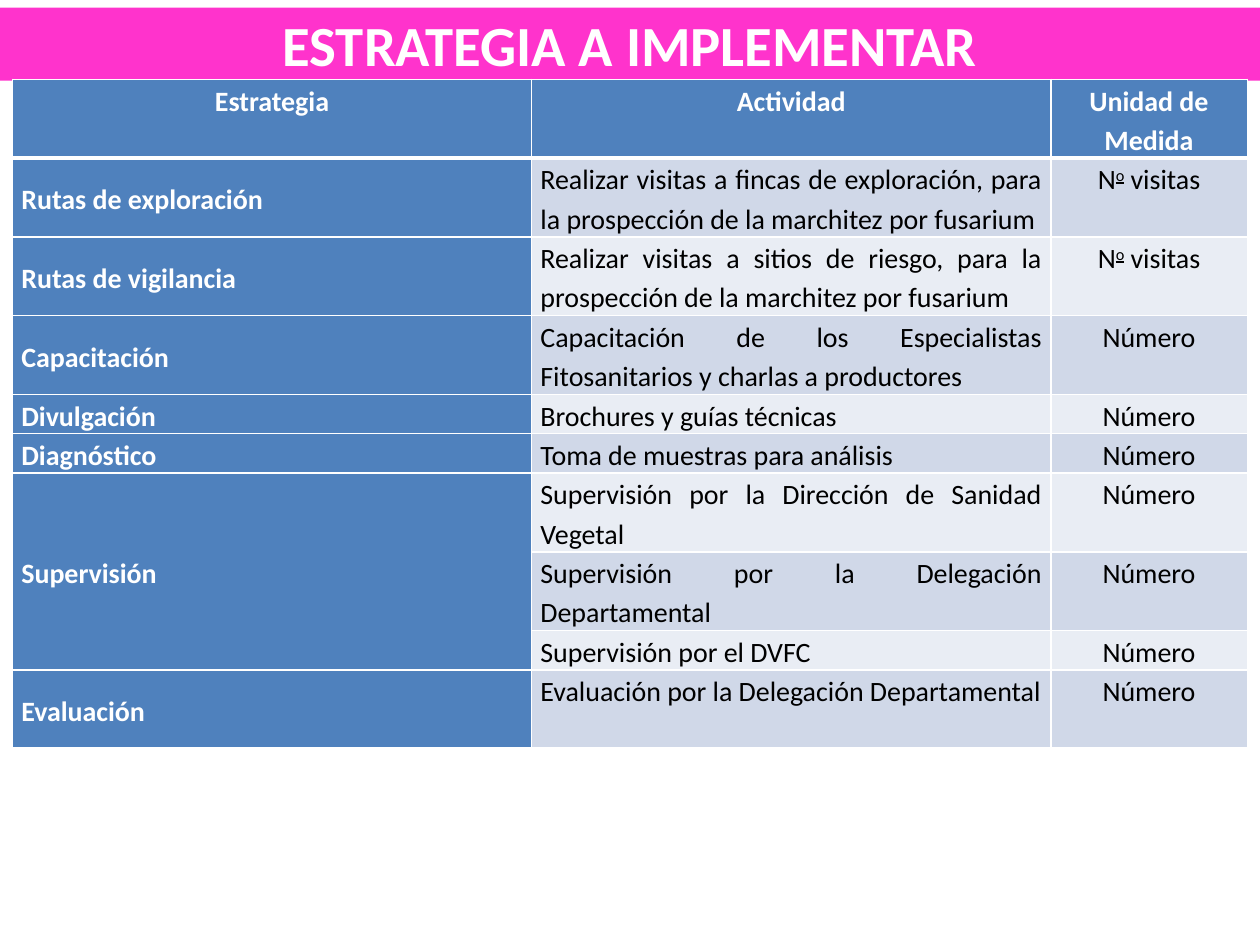
"""Build the slide with the strategy table, its activities and units."""
from lxml import etree
from pptx import Presentation
from pptx.dml.color import RGBColor
from pptx.enum import text
from pptx.oxml import ns
from pptx.util import Inches, Pt

BLUE, WHITE, BLACK = "4F81BD", "FFFFFF", "000000"
BANDS = ["E9EDF4", "D0D8E8"]
LINE = 0.31


def paint(obj, tone):
    """Give a fill a solid colour, or a font its colour."""
    if hasattr(obj, "solid"):
        obj.solid()
        obj = obj.fore_color
    else:
        obj = obj.color
    obj.rgb = RGBColor.from_string(tone)


def edge(cell, side, width):
    """Draw one white border of a cell."""
    props = cell._tc.get_or_add_tcPr()
    line = etree.SubElement(props, ns.qn(f"a:ln{side}"), w=str(Pt(width)))
    fill = etree.SubElement(line, ns.qn("a:solidFill"))
    etree.SubElement(fill, ns.qn("a:srgbClr"), val=WHITE)


rows = [
    ("Estrategia", "Actividad", "Unidad de Medida", 2),
    ("Rutas de exploración", "Realizar visitas a fincas de exploración, "
     "para la prospección de la marchitez por fusarium", "No visitas", 2),
    ("Rutas de vigilancia", "Realizar visitas a sitios de riesgo, "
     "para la prospección de la marchitez por fusarium", "No visitas", 2),
    ("Capacitación", "Capacitación de los Especialistas Fitosanitarios "
     "y charlas a productores", "Número", 2),
    ("Divulgación", "Brochures y guías técnicas", "Número", 1),
    ("Diagnóstico", "Toma de muestras para análisis", "Número", 1),
    ("Supervisión", "Supervisión por la Dirección de Sanidad Vegetal",
     "Número", 2),
    ("", "Supervisión por la Delegación Departamental", "Número", 2),
    ("", "Supervisión por el DVFC", "Número", 1),
    ("Evaluación", "Evaluación por la Delegación Departamental",
     "Número", 2),
]

deck = Presentation()
deck.slide_width, deck.slide_height = Inches(10), Inches(7.5)
slide = deck.slides.add_slide(deck.slide_layouts[5])

title = slide.shapes.title
title.left, title.top = Inches(0), Inches(0.06)
title.width, title.height = Inches(10), Inches(0.58)
paint(title.fill, "FF33CC")
frame = title.text_frame
frame.text = "ESTRATEGIA A IMPLEMENTAR"
frame.auto_size = text.MSO_AUTO_SIZE.NONE
frame.vertical_anchor = text.MSO_ANCHOR.MIDDLE
para = frame.paragraphs[0]
para.alignment = text.PP_ALIGN.CENTER
para.font.name, para.font.size, para.font.bold = "Calibri", Pt(32.4), True
paint(para.font, WHITE)

high = LINE * sum(row[-1] for row in rows)
table = slide.shapes.add_table(len(rows), 3, Inches(0.1), Inches(0.63),
                               Inches(9.8), Inches(high)).table
for col, width in zip(table.columns, (4.12, 4.12, 1.56)):
    col.width = Inches(width)

for r, (*words, lines) in enumerate(rows):
    table.rows[r].height = Inches(LINE * lines)
    for c, word in enumerate(words):
        cell = table.cell(r, c)
        head = r == 0 or c == 0
        cell.margin_left = cell.margin_right = Inches(0.07)
        cell.margin_top = cell.margin_bottom = 0
        if c == 0 and r > 0:
            cell.vertical_anchor = text.MSO_ANCHOR.MIDDLE
        for side in "LRTB":
            thick = (r, side) in ((0, "B"), (1, "T"))
            edge(cell, side, 3 if thick else 1)
        paint(cell.fill, BLUE if head else BANDS[r % 2])

        para = cell.text_frame.paragraphs[0]
        center = r == 0 or c == 2
        para.alignment = (text.PP_ALIGN.CENTER if center
                          else text.PP_ALIGN.JUSTIFY)
        para.line_spacing = 1.15
        font = para.font
        font.name, font.size, font.bold = "Calibri", Pt(16), head
        paint(font, WHITE if head else BLACK)
        parts = ("N", "o", " visitas") if word == "No visitas" else (word,)
        for part in filter(None, parts):
            run = para.add_run()
            run.text = part
            if part == "o":
                run.font.underline = True
                run.font._element.set("baseline", "30000")

table.cell(6, 0).merge(table.cell(8, 0))
deck.save("out.pptx")
